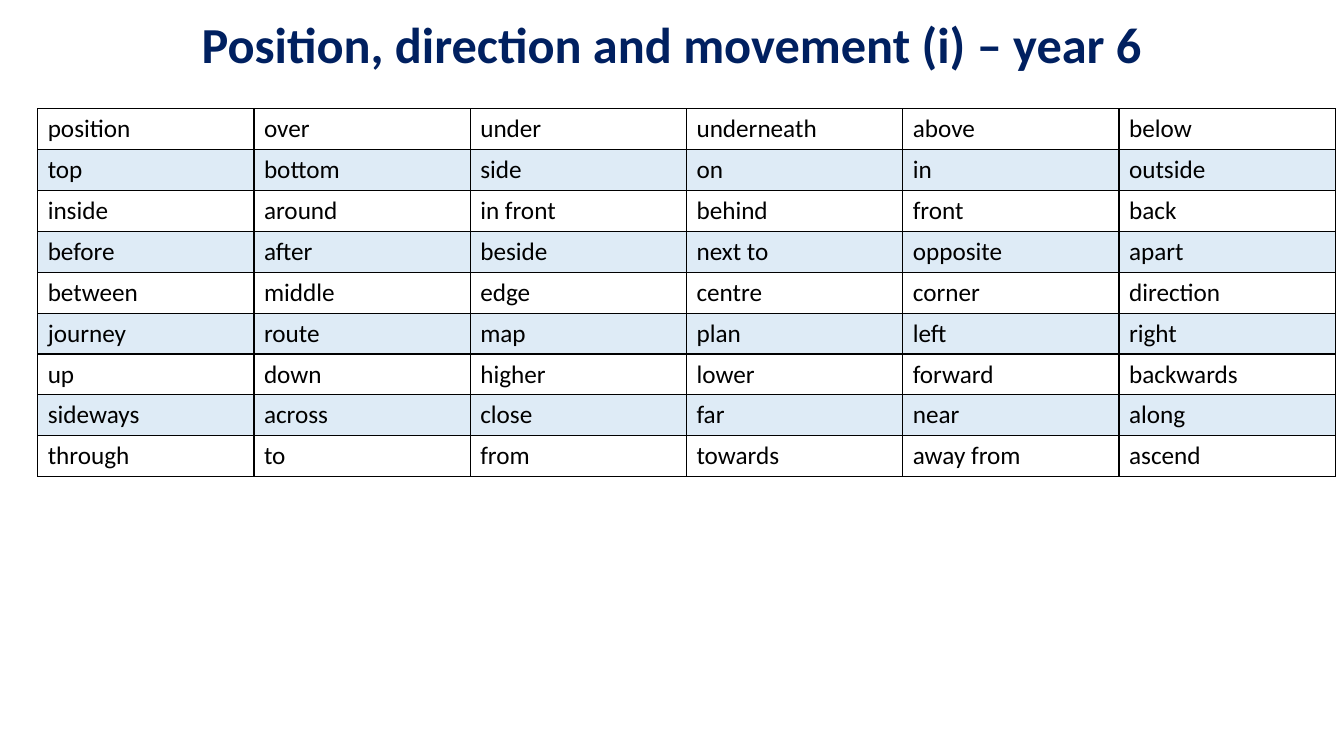
from dataclasses import dataclass

from lxml.etree import SubElement
from pptx import Presentation
from pptx.dml.color import RGBColor as Rgb
from pptx.enum.text import MSO_ANCHOR as Anchor, PP_ALIGN as Align
from pptx.oxml.ns import qn
from pptx.util import Cm, Pt

# Content
HEADING = "Position, direction and movement (i) – year 6"
WORDS = [
    ("position", "over", "under", "underneath", "above", "below"),
    ("top", "bottom", "side", "on", "in", "outside"),
    ("inside", "around", "in front", "behind", "front", "back"),
    ("before", "after", "beside", "next to", "opposite", "apart"),
    ("between", "middle", "edge", "centre", "corner", "direction"),
    ("journey", "route", "map", "plan", "left", "right"),
    ("up", "down", "higher", "lower", "forward", "backwards"),
    ("sideways", "across", "close", "far", "near", "along"),
    ("through", "to", "from", "towards", "away from", "ascend"),
]


@dataclass(frozen=True)
class Theme:
    font: str = "Calibri"
    heading_size: int = 36
    word_size: int = 18
    heading: str = "002060"
    ink: str = "000000"
    band: str = "5B9BD5"
    band_opacity: int = 20
    border: int = 1


THEME = Theme()
COLUMN_WIDTH, ROW_HEIGHT = Cm(5.45), Cm(1.03)


def style(paragraph, size, color, bold=False):
    font = paragraph.font
    font.name, font.size, font.bold = THEME.font, Pt(size), bold
    font.color.rgb = Rgb.from_string(color)


def add_borders(cell):
    properties = cell._tc.get_or_add_tcPr()
    for side in ("a:lnL", "a:lnR", "a:lnT", "a:lnB"):
        edge = SubElement(properties, qn(side), w=str(Pt(THEME.border)))
        solid = SubElement(edge, qn("a:solidFill"))
        SubElement(solid, qn("a:srgbClr"), val=THEME.ink)


def fill_band(cell):
    cell.fill.solid()
    cell.fill.fore_color.rgb = Rgb.from_string(THEME.band)
    color = cell._tc.tcPr.find(qn("a:solidFill")).find(qn("a:srgbClr"))
    SubElement(color, qn("a:alpha"), val=str(THEME.band_opacity * 1000))


def add_heading(slide):
    frame = slide.shapes.add_textbox(Cm(2.33), Cm(0.15), Cm(29.21), Cm(2.06)).text_frame
    frame.word_wrap = True
    frame.vertical_anchor = Anchor.MIDDLE
    heading = frame.paragraphs[0]
    heading.text = HEADING
    heading.alignment = Align.CENTER
    heading.line_spacing = 0.9
    style(heading, THEME.heading_size, THEME.heading, bold=True)


def add_word_grid(slide):
    row_count, column_count = len(WORDS), len(WORDS[0])
    grid = slide.shapes.add_table(
        row_count, column_count, Cm(0.95), Cm(2.74),
        COLUMN_WIDTH * column_count, ROW_HEIGHT * row_count).table
    grid.first_row = grid.horz_banding = False
    for column in grid.columns:
        column.width = COLUMN_WIDTH
    for r, words in enumerate(WORDS):
        grid.rows[r].height = ROW_HEIGHT
        for c, word in enumerate(words):
            cell = grid.cell(r, c)
            cell.text = word
            style(cell.text_frame.paragraphs[0], THEME.word_size, THEME.ink)
            # Borders come before the fill in the cell properties
            add_borders(cell)
            if r % 2:
                fill_band(cell)
            else:
                cell.fill.background()


def main():
    deck = Presentation()
    deck.slide_width, deck.slide_height = Cm(33.87), Cm(19.05)
    slide = deck.slides.add_slide(deck.slide_layouts[6])
    add_heading(slide)
    add_word_grid(slide)
    deck.save("out.pptx")


if __name__ == "__main__":
    main()
